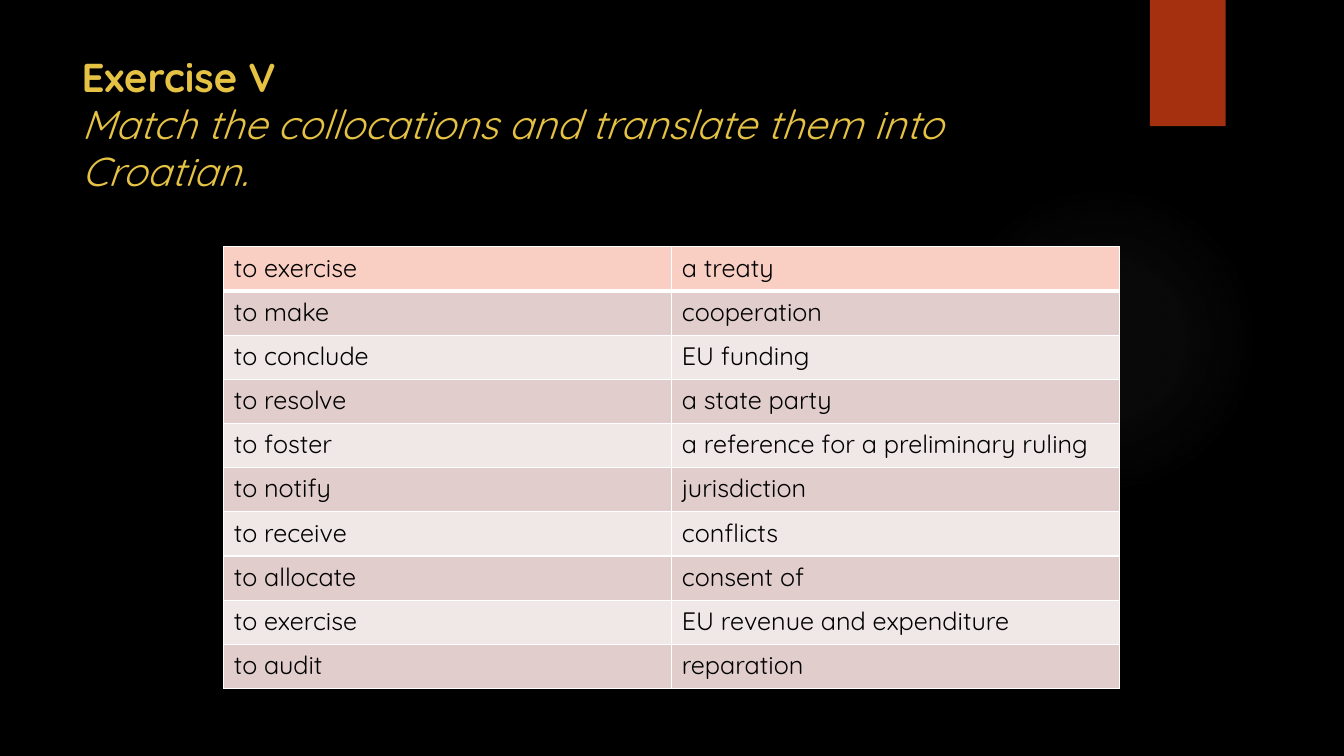
from lxml import etree
from pptx import Presentation
from pptx import util as u
from pptx.dml.color import RGBColor
from pptx.enum import shapes, text
from pptx.oxml import ns

BLACK = RGBColor(0x00, 0x00, 0x00)
WHITE = RGBColor(0xFF, 0xFF, 0xFF)
GOLD = RGBColor(0xE5, 0xC2, 0x43)
RUST = RGBColor(0xA5, 0x30, 0x0F)
GLOW = RGBColor(0x84, 0x84, 0x84)
PEACH = RGBColor(0xF9, 0xCF, 0xC3)
ROSE = RGBColor(0xE1, 0xCD, 0xCC)
PALE = RGBColor(0xF0, 0xE8, 0xE7)

COLLOCATIONS = [
    ("to exercise", "a treaty"),
    ("to make", "cooperation"),
    ("to conclude", "EU funding"),
    ("to resolve", "a state party"),
    ("to foster", "a reference for a preliminary ruling"),
    ("to notify", "jurisdiction"),
    ("to receive", "conflicts"),
    ("to allocate", "consent of"),
    ("to exercise", "EU revenue and expenditure"),
    ("to audit", "reparation"),
]


def add_element(parent, tag, **attributes):
    return etree.SubElement(parent, ns.qn(tag), attributes)


class ExerciseSlide:
    """Holds the text style and the slide being filled."""

    font = "Quicksand"

    def __init__(self, presentation):
        self.slide = presentation.slides.add_slide(presentation.slide_layouts[5])
        self.slide.background.fill.solid()
        self.slide.background.fill.fore_color.rgb = BLACK

    def run(self, paragraph, words, size, color, bold=False, italic=False):
        run = paragraph.add_run()
        run.text = words
        run.font.name = self.font
        run.font.size = u.Pt(size)
        run.font.color.rgb = color
        run.font.bold = bold
        run.font.italic = italic

    def shape(self, preset, left, top, width, height):
        shape = self.slide.shapes.add_shape(
            preset, u.Cm(left), u.Cm(top), u.Cm(width), u.Cm(height))
        shape.shadow.inherit = False
        shape.line.fill.background()
        return shape

    def glow(self, left, top, size, stops):
        halo = self.shape(shapes.MSO_SHAPE.OVAL, left, top, size, size)
        halo.fill.gradient()
        gradient = halo.fill._xPr.find(ns.qn("a:gradFill"))
        for child in list(gradient):
            gradient.remove(child)
        stop_list = add_element(gradient, "a:gsLst")
        for position, opacity in stops:
            stop = add_element(stop_list, "a:gs", pos=str(position * 1000))
            color = add_element(stop, "a:srgbClr", val=str(GLOW))
            add_element(color, "a:alpha", val=str(opacity * 1000))
        circle = add_element(gradient, "a:path", path="circle")
        add_element(circle, "a:fillToRect", l="50000", t="50000", r="50000", b="50000")

    def ribbon(self, left, top, width, height):
        ribbon = self.shape(shapes.MSO_SHAPE.RECTANGLE, left, top, width, height)
        ribbon.fill.solid()
        ribbon.fill.fore_color.rgb = RUST

    def title(self, left, top, width, height, heading, instruction):
        title = self.slide.shapes.title
        title.left, title.top = u.Cm(left), u.Cm(top)
        title.width, title.height = u.Cm(width), u.Cm(height)
        frame = title.text_frame
        frame.word_wrap = True
        frame.auto_size = text.MSO_AUTO_SIZE.NONE
        frame.vertical_anchor = text.MSO_ANCHOR.TOP
        paragraph = frame.paragraphs[0]
        paragraph.alignment = text.PP_ALIGN.LEFT
        paragraph.line_spacing = 0.97
        self.run(paragraph, heading, 28.8, GOLD, bold=True)
        paragraph.add_line_break()
        self.run(paragraph, instruction, 28.8, GOLD, italic=True)

    def borders(self, cell, **widths):
        properties = cell._tc.get_or_add_tcPr()
        for side, width in widths.items():
            line = add_element(properties, f"a:ln{side}", w=str(u.Pt(width)))
            add_element(add_element(line, "a:solidFill"), "a:srgbClr", val=str(WHITE))

    def table(self, left, top, width, height, rows):
        table = self.slide.shapes.add_table(
            len(rows), len(rows[0]),
            u.Cm(left), u.Cm(top), u.Cm(width), u.Cm(height)).table
        for r, phrases in enumerate(rows):
            fill = PEACH if r == 0 else ROSE if r % 2 else PALE
            for c, phrase in enumerate(phrases):
                cell = table.cell(r, c)
                self.borders(cell, L=1, R=1, T=3 if r == 1 else 1, B=3 if r == 0 else 1)
                cell.fill.solid()
                cell.fill.fore_color.rgb = fill
                self.run(cell.text_frame.paragraphs[0], phrase, 18, BLACK)


def main():
    presentation = Presentation()
    presentation.slide_width = u.Cm(33.87)
    presentation.slide_height = u.Cm(19.05)
    exercise = ExerciseSlide(presentation)

    # Backdrop
    exercise.glow(23.9, 4.65, 7.82, [(0, 7), (36, 6), (69, 0)])
    exercise.ribbon(28.98, 0, 1.91, 3.18)

    # Heading and task
    exercise.title(1.8, 1.27, 26.14, 3.89, "Exercise V",
                   "Match the collocations and translate them into Croatian.")

    # Collocations to match
    exercise.table(5.64, 6.22, 22.58, 11.13, COLLOCATIONS)

    presentation.save("out.pptx")


if __name__ == "__main__":
    main()
